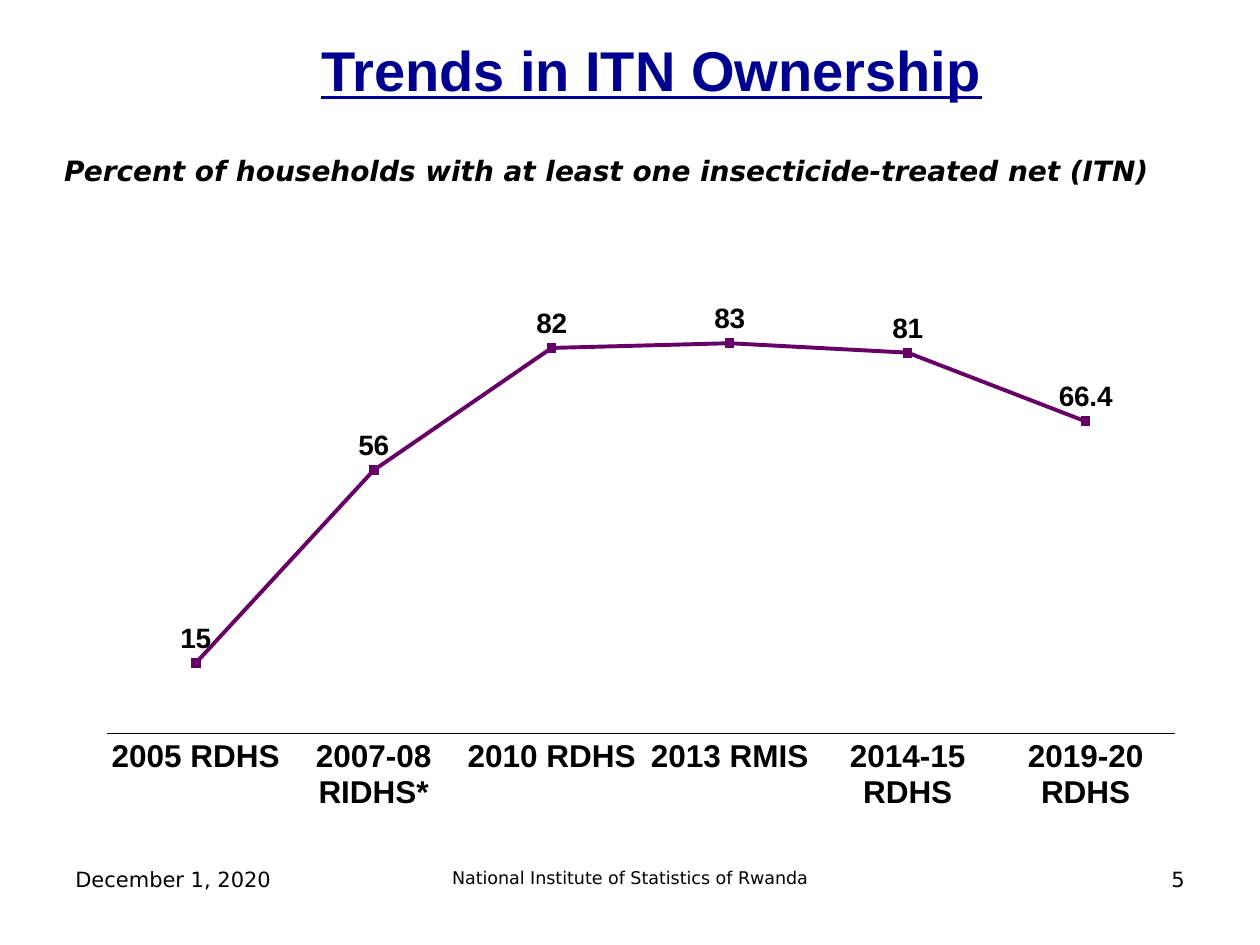
from lxml import etree
from pptx import Presentation
from pptx.chart.data import CategoryChartData
from pptx.dml.color import RGBColor
from pptx.enum.chart import XL_CHART_TYPE, XL_LABEL_POSITION, XL_MARKER_STYLE, XL_TICK_MARK
from pptx.enum.text import MSO_ANCHOR, PP_ALIGN
from pptx.oxml.ns import qn
from pptx.util import Inches, Pt

BLACK, NAVY, PURPLE = "000000", "000090", "660066"
HEADING_FONT, BODY_FONT = "Arial", "DejaVu Sans"

OWNERSHIP = {
    "2005 RDHS": 15,
    "2007-08 RIDHS*": 56,
    "2010 RDHS": 82,
    "2013 RMIS": 83,
    "2014-15 RDHS": 81,
    "2019-20 RDHS": 66.4,
}


def rgb(value):
    return RGBColor.from_string(value)


def style_font(font, size, color=BLACK, name=BODY_FONT, bold=False, italic=False, underline=False):
    font.size, font.name = Pt(size), name
    font.bold, font.italic, font.underline = bold, italic, underline
    font.color.rgb = rgb(color)


def add_text(s, text, left, top, width, height, align=PP_ALIGN.LEFT,
             anchor=MSO_ANCHOR.TOP, **font):
    sp = s.shapes.add_textbox(Inches(left), Inches(top), Inches(width), Inches(height))
    tf = sp.text_frame
    tf.word_wrap = True
    tf.vertical_anchor = anchor
    p = tf.paragraphs[0]
    p.alignment = align
    r = p.add_run()
    r.text = text
    style_font(r.font, **font)


def set_plot_area(chart, **fractions):
    """Fix the inner plot area as fractions of the chart: x, y, w, h."""
    area = chart.plots[0]._element.getparent()
    layout = area.find(qn("c:layout"))
    if layout is None:
        layout = etree.Element(qn("c:layout"))
        area.insert(0, layout)
    manual = etree.SubElement(layout, qn("c:manualLayout"))
    settings = {"layoutTarget": "inner", "xMode": "edge", "yMode": "edge", **fractions}
    for tag, value in settings.items():
        etree.SubElement(manual, qn(f"c:{tag}")).set("val", str(value))


def add_header(s, left, top, width):
    add_text(s, "Trends in ITN Ownership", left + 0.87, top, 8.34, 0.59,
             align=PP_ALIGN.CENTER, anchor=MSO_ANCHOR.MIDDLE,
             size=32, color=NAVY, name=HEADING_FONT, bold=True, underline=True)
    add_text(s, "Percent of households with at least one insecticide-treated net (ITN)",
             left, top + 0.92, width, 0.37, align=PP_ALIGN.CENTER,
             size=16, bold=True, italic=True)


def add_trend_chart(s, left, top, width, height):
    data = CategoryChartData()
    data.categories = list(OWNERSHIP)
    data.add_series("Series 1", list(OWNERSHIP.values()))
    chart = s.shapes.add_chart(XL_CHART_TYPE.LINE_MARKERS, Inches(left), Inches(top),
                               Inches(width), Inches(height), data).chart
    chart.has_legend = chart.has_title = False
    style_font(chart.font, 10, name=HEADING_FONT)
    set_plot_area(chart, x=0.02, y=0.02, w=0.96, h=0.83)

    years = chart.category_axis
    years.major_tick_mark = years.minor_tick_mark = XL_TICK_MARK.NONE
    years.format.line.color.rgb = rgb(BLACK)
    years.format.line.width = Pt(0.75)
    style_font(years.tick_labels.font, 18, name=HEADING_FONT, bold=True)

    percent = chart.value_axis
    percent.minimum_scale, percent.maximum_scale = 0, 100
    percent.has_major_gridlines = False
    percent.visible = False

    plot = chart.plots[0]
    plot.vary_by_categories = False
    series = plot.series[0]
    series.smooth = False
    series.format.line.color.rgb = rgb(PURPLE)
    series.format.line.width = Pt(2.25)
    marker = series.marker
    marker.style, marker.size = XL_MARKER_STYLE.SQUARE, 5
    marker.format.fill.solid()
    marker.format.fill.fore_color.rgb = rgb(PURPLE)
    marker.format.line.color.rgb = rgb(PURPLE)

    labels = series.data_labels
    labels.show_value = True
    labels.position = XL_LABEL_POSITION.ABOVE
    style_font(labels.font, 16, name=HEADING_FONT, bold=True)


def add_footer(s, left, top, width, height):
    side, middle = 2.33, 3.17
    add_text(s, "December 1, 2020", left, top, side, height, size=12)
    add_text(s, "National Institute of Statistics of Rwanda",
             left + (width - middle) / 2, top, middle, height,
             align=PP_ALIGN.CENTER, size=10)
    add_text(s, "5", left + width - side, top, side, height,
             align=PP_ALIGN.RIGHT, size=12)


def main():
    prs = Presentation()
    prs.slide_width, prs.slide_height = Inches(10), Inches(7.5)
    s = prs.slides.add_slide(prs.slide_layouts[6])
    add_header(s, 0.13, 0.25, 9.37)
    add_trend_chart(s, 0.67, 2, 8.83, 4.5)
    add_footer(s, 0.5, 6.83, 9, 0.52)
    prs.save("out.pptx")


if __name__ == "__main__":
    main()
